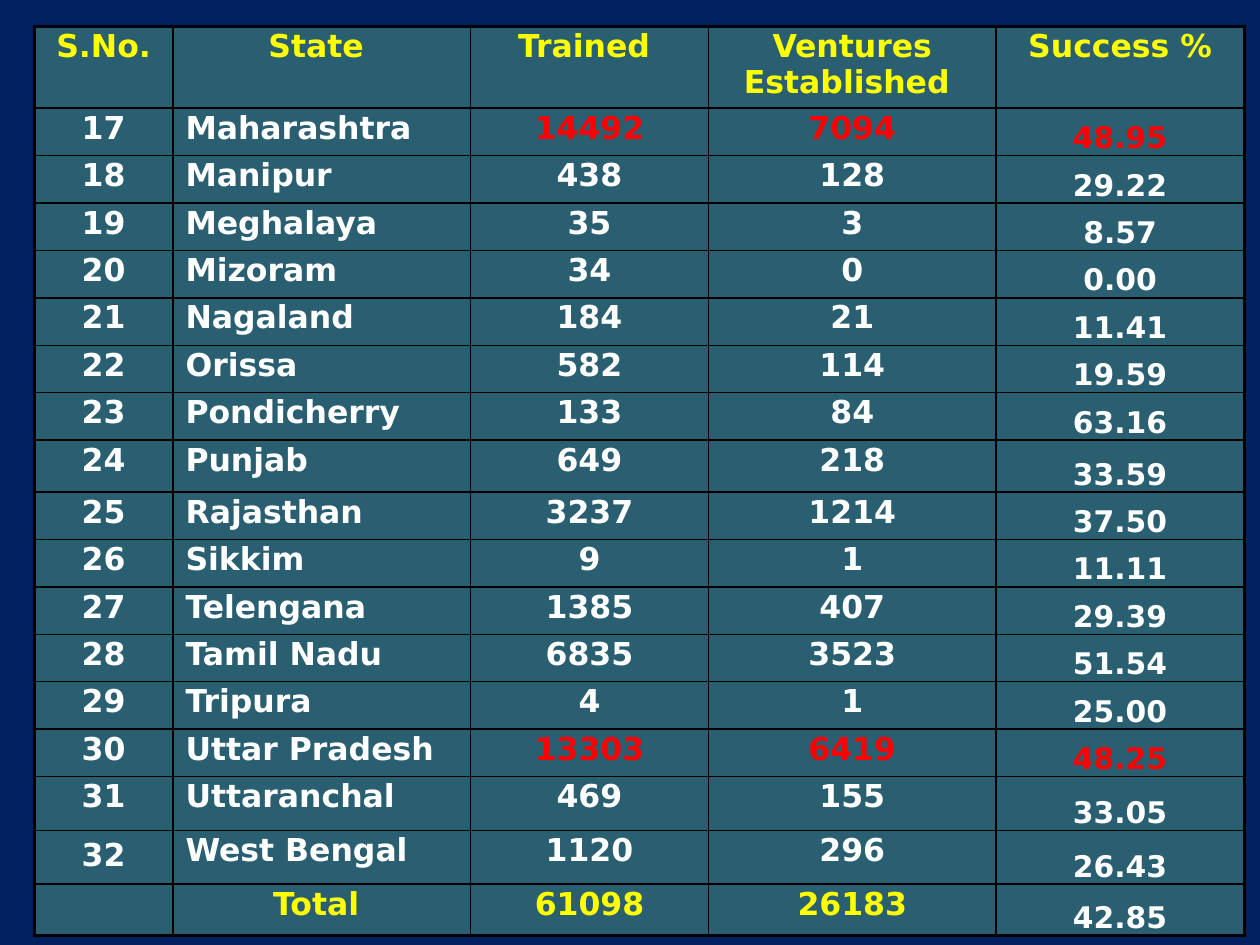
from dataclasses import dataclass

from lxml.etree import SubElement
from pptx import Presentation
from pptx.dml.color import RGBColor as Rgb
from pptx.enum.text import MSO_ANCHOR as Anchor, PP_ALIGN as Align
from pptx.oxml.ns import qn
from pptx.util import Pt


@dataclass(frozen=True)
class Theme:
    background: str = "002060"
    cell: str = "295F71"
    border: str = "000000"
    accent: str = "FFFF00"
    body: str = "FFFFFF"
    highlight: str = "FF0000"
    font: str = "DejaVu Sans"
    size: float = 18
    rate_size: float = 17
    inner_line: float = 1
    outer_line: float = 2.25


THEME = Theme()

HEADINGS = ("S.No.", "State ", "Trained ", "Ventures\nEstablished ", "Success %")
FIRST_NUMBER = 17
STATES = (
    ("Maharashtra", "14492", "7094", "48.95"),
    ("Manipur", "438", "128", "29.22"),
    ("Meghalaya", "35", "3", "8.57"),
    ("Mizoram", "34", "0", "0.00"),
    ("Nagaland", "184", "21", "11.41"),
    ("Orissa", "582", "114", "19.59"),
    ("Pondicherry", "133", "84", "63.16"),
    ("Punjab", "649", "218", "33.59"),
    ("Rajasthan", "3237", "1214", "37.50"),
    ("Sikkim", "9", "1", "11.11"),
    ("Telengana", "1385", "407", "29.39"),
    ("Tamil Nadu", "6835", "3523", "51.54"),
    ("Tripura", "4", "1", "25.00"),
    ("Uttar Pradesh", "13303", "6419", "48.25"),
    ("Uttaranchal", "469", "155", "33.05"),
    ("West Bengal", "1120", "296", "26.43"),
)
TOTALS = ("", "Total ", "61098", "26183", "42.85")
HIGHLIGHTED = {"Maharashtra", "Uttar Pradesh"}

COLUMN_SHARES = (1.1, 2.36, 1.89, 2.28, 1.97)
HEADER_HEIGHT, STATE_HEIGHT, TOTAL_HEIGHT = 46.8, 27.1, 28.1
TALL_ROWS = {"Punjab": 29.7, "Uttaranchal": 30.9, "West Bengal": 30.6}
STATE_COLUMN, RATE_COLUMN = 1, 4


def write(frame, text, *, color, size=THEME.size, align=Align.CENTER,
          line_spacing=0.85, space_before=3):
    """Put each line of text in its own paragraph."""
    for index, line in enumerate(text.split("\n")):
        paragraph = frame.add_paragraph() if index else frame.paragraphs[0]
        paragraph.alignment = align
        paragraph.line_spacing = line_spacing
        paragraph.space_before = Pt(space_before)
        run = paragraph.add_run()
        run.text = line
        run.font.name = THEME.font
        run.font.size = Pt(size)
        run.font.bold = True
        run.font.color.rgb = Rgb.from_string(color)


def draw_borders(cell, outer_sides):
    """Line all four sides, heavier on those at the table's edge."""
    properties = cell._tc.get_or_add_tcPr()
    for position, side in enumerate("LRTB"):
        width = THEME.outer_line if side in outer_sides else THEME.inner_line
        line = SubElement(properties, qn(f"a:ln{side}"), w=str(Pt(width)))
        fill = SubElement(line, qn("a:solidFill"))
        SubElement(fill, qn("a:srgbClr"), val=THEME.border)
        properties.remove(line)
        properties.insert(position, line)


def set_margins(cell, left, top, right, bottom):
    cell.margin_left, cell.margin_top = Pt(left), Pt(top)
    cell.margin_right, cell.margin_bottom = Pt(right), Pt(bottom)


def fill_row(table, row, values, colors, **formats):
    """Style one row; formats maps a column as c<number> to text options."""
    last_row, last_column = len(table.rows) - 1, len(table.columns) - 1
    for column, (value, color) in enumerate(zip(values, colors)):
        cell = table.cell(row, column)
        cell.fill.solid()
        cell.fill.fore_color.rgb = Rgb.from_string(THEME.cell)
        edges = {"L": column == 0, "R": column == last_column,
                 "T": row == 0, "B": row == last_row}
        draw_borders(cell, {side for side, at_edge in edges.items() if at_edge})
        if column == RATE_COLUMN and row:
            set_margins(cell, 0.72, 0.72, 0.72, 0)
            cell.vertical_anchor = Anchor.BOTTOM
        else:
            set_margins(cell, 7.2, 3.6, 7.2, 3.6)
        if value:
            write(cell.text_frame, value, color=color,
                  **formats.get(f"c{column}", {}))


def add_state_table(slide, left, top, width):
    heights = [HEADER_HEIGHT]
    heights += [TALL_ROWS.get(state[0], STATE_HEIGHT) for state in STATES]
    heights.append(TOTAL_HEIGHT)
    table = slide.shapes.add_table(
        len(heights), len(HEADINGS), Pt(left), Pt(top), Pt(width),
        Pt(sum(heights))).table
    table.first_row = table.horz_banding = False
    for column, share in zip(table.columns, COLUMN_SHARES):
        column.width = Pt(width * share / sum(COLUMN_SHARES))
    for row, height in zip(table.rows, heights):
        row.height = Pt(height)

    plain = {"line_spacing": 1.0, "space_before": 0}
    rate = {"size": THEME.rate_size, **plain}
    fill_row(table, 0, HEADINGS, [THEME.accent] * 5)
    for row, state in enumerate(STATES, start=1):
        figures = THEME.highlight if state[0] in HIGHLIGHTED else THEME.body
        is_last = row == len(STATES)
        fill_row(table, row, (str(FIRST_NUMBER + row - 1), *state),
                 [THEME.body] * 2 + [figures] * 3,
                 c0=plain if is_last else {},
                 c1={"align": Align.LEFT}, c4=rate)
    fill_row(table, len(heights) - 1, TOTALS,
             [THEME.accent] * 4 + [THEME.body], c4=rate)


def main():
    deck = Presentation()
    deck.slide_width, deck.slide_height = Pt(720), Pt(540)
    slide = deck.slides.add_slide(deck.slide_layouts[6])
    slide.background.fill.solid()
    slide.background.fill.fore_color.rgb = Rgb.from_string(THEME.background)
    add_state_table(slide, left=19.6, top=15, width=691.5)
    deck.save("out.pptx")


if __name__ == "__main__":
    main()
